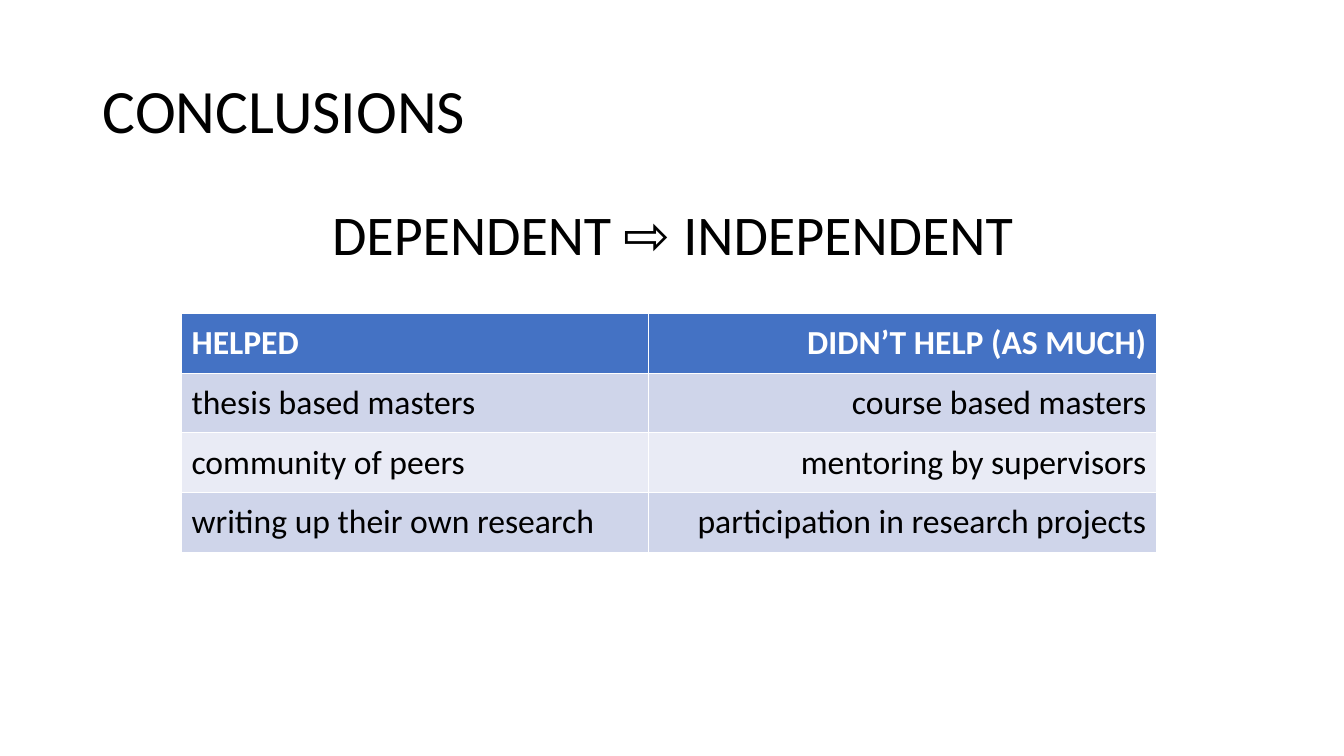
from lxml import etree
from pptx import Presentation
from pptx.dml.color import RGBColor
from pptx.enum import text
from pptx.oxml import ns
from pptx.util import Inches, Pt

COLORS = {"ink": "000000", "white": "FFFFFF", "header": "4472C4",
          "band_dark": "CFD5EA", "band_light": "E9EBF5"}
FONT = "Calibri"
LEFT, CENTER, RIGHT = (text.PP_ALIGN.LEFT, text.PP_ALIGN.CENTER,
                       text.PP_ALIGN.RIGHT)
ROWS = [
    ("HELPED", "DIDN’T HELP (AS MUCH)"),
    ("thesis based masters", "course based masters"),
    ("community of peers", "mentoring by supervisors"),
    ("writing up their own research", "participation in research projects"),
]


def set_attributes(target, values):
    for name, value in values.items():
        setattr(target, name, value)


def write(frame, wording, size, color="ink", bold=False, **para_format):
    """Fill a text frame with one formatted paragraph."""
    para = frame.paragraphs[0]
    set_attributes(para, para_format)
    span = para.add_run()
    span.text = wording
    set_attributes(span.font, {"name": FONT, "size": Pt(size), "bold": bold})
    span.font.color.rgb = RGBColor.from_string(COLORS[color])
    return para


def place(shape, box, anchor):
    names = ("left", "top", "width", "height")
    set_attributes(shape, dict(zip(names, map(Inches, box))))
    set_attributes(shape.text_frame, {
        "vertical_anchor": anchor, "word_wrap": True,
        "auto_size": text.MSO_AUTO_SIZE.NONE})


def add_title(page, box):
    title = page.shapes.title
    place(title, box, text.MSO_ANCHOR.MIDDLE)
    write(title.text_frame, "CONCLUSIONS", 44, alignment=LEFT,
          line_spacing=0.9)


def add_statement(page, box):
    body = page.placeholders[1]
    place(body, box, text.MSO_ANCHOR.TOP)
    para = write(body.text_frame, "DEPENDENT ⇨ INDEPENDENT", 40,
                 alignment=CENTER, line_spacing=0.9, space_before=Pt(10))
    # Plain line without bullet or indent
    properties = para._p.get_or_add_pPr()
    properties.set("marL", "0")
    properties.set("indent", "0")
    etree.SubElement(properties, ns.qn("a:buNone"))


def add_comparison(page, box, column_widths):
    frame = page.shapes.add_table(len(ROWS), len(column_widths),
                                  *map(Inches, box))
    table = frame.table
    for column, width in zip(table.columns, column_widths):
        column.width = Inches(width)
    for row_index, row in enumerate(ROWS):
        header = row_index == 0
        band = "band_dark" if row_index % 2 else "band_light"
        for column_index, wording in enumerate(row):
            cell = table.cell(row_index, column_index)
            cell.vertical_anchor = text.MSO_ANCHOR.MIDDLE
            cell.fill.solid()
            cell.fill.fore_color.rgb = RGBColor.from_string(
                COLORS["header" if header else band])
            write(cell.text_frame, wording, 24,
                  "white" if header else "ink", header,
                  alignment=RIGHT if column_index else LEFT)


def main():
    deck = Presentation()
    set_attributes(deck, {"slide_width": Inches(13.33),
                          "slide_height": Inches(7.5)})
    page = deck.slides.add_slide(deck.slide_layouts[1])
    add_title(page, (0.92, 0.4, 11.5, 1.45))
    add_statement(page, (0.92, 2, 11.5, 4.76))
    add_comparison(page, (1.8, 3.11, 9.67, 2.37), (4.63, 5.04))
    deck.save("out.pptx")


if __name__ == "__main__":
    main()
